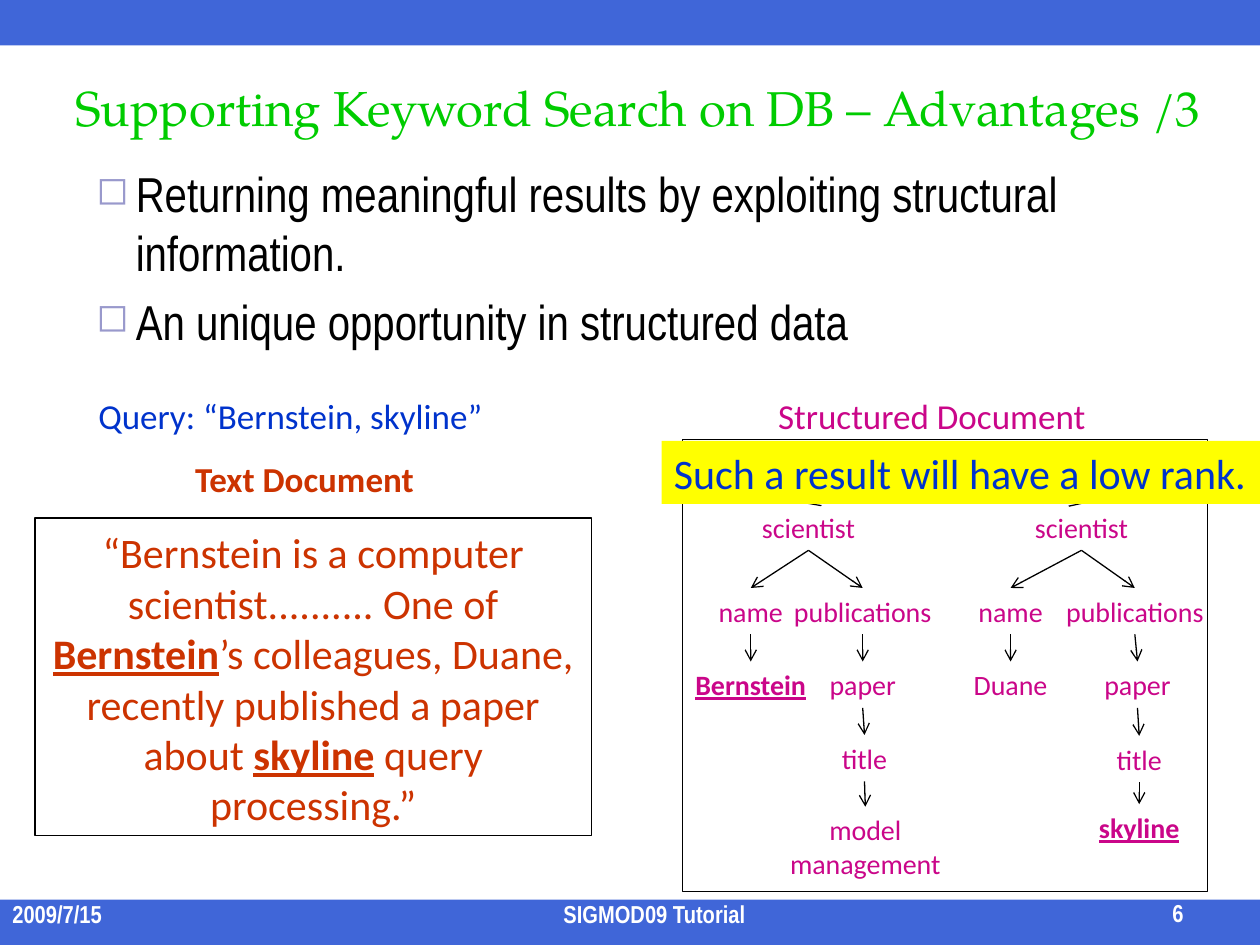
import pptx
import pptx.util
import pptx.dml.color
import pptx.enum.shapes
import pptx.enum.text
import pptx.oxml.ns
import lxml.etree

Pt = pptx.util.Pt
ALIGN = pptx.enum.text.PP_ALIGN
ANCHOR = pptx.enum.text.MSO_ANCHOR
RECTANGLE = pptx.enum.shapes.MSO_SHAPE.RECTANGLE
STRAIGHT = pptx.enum.shapes.MSO_CONNECTOR.STRAIGHT
qn = pptx.oxml.ns.qn
color = pptx.dml.color.RGBColor.from_string

BLUE, RUST, MAGENTA, WHITE, BLACK = "0033CC", "CC3300", "CA0689", "FFFFFF", "000000"

presentation = pptx.Presentation()
presentation.slide_width, presentation.slide_height = Pt(720), Pt(540)
slide = presentation.slides.add_slide(presentation.slide_layouts[6])


def add_rectangle(left, top, width, height, fill=None, line=None):
    shape = slide.shapes.add_shape(RECTANGLE, Pt(left), Pt(top), Pt(width), Pt(height))
    shape.shadow.inherit = False
    if fill:
        shape.fill.solid()
        shape.fill.fore_color.rgb = color(fill)
    else:
        shape.fill.background()
    if line:
        shape.line.color.rgb = color(line)
        shape.line.width = Pt(0.75)
    else:
        shape.line.fill.background()
    return shape


def add_text(left, top, width, height, text, size, ink, font="Calibri", bold=False,
             underline=False, align=ALIGN.CENTER, anchor=ANCHOR.TOP):
    box = slide.shapes.add_textbox(Pt(left), Pt(top), Pt(width), Pt(height))
    frame = box.text_frame
    frame.word_wrap = True
    frame.vertical_anchor = anchor
    frame.text = text
    for paragraph in frame.paragraphs:
        paragraph.alignment = align
        paragraph.font.size = Pt(size)
        paragraph.font.name = font
        for run in paragraph.runs:
            run.font.size = Pt(size)
            run.font.name = font
            run.font.color.rgb = color(ink)
            run.font.bold = bold
            run.font.underline = underline
    return box


for top in (514, 0):
    band = add_rectangle(0, top, 720, 26, BLUE)
    fill_color = band.fill._xPr.find(qn("a:solidFill"))[0]
    lxml.etree.SubElement(fill_color, qn("a:alpha"), val="75000")

body = add_text(
    12, 90, 660, 350,
    "Returning meaningful results by exploiting structural information.\n"
    "An unique opportunity in structured data",
    28, BLACK, "Arial Narrow", align=ALIGN.LEFT)
for paragraph in body.text_frame.paragraphs:
    paragraph.space_before = Pt(5.6)
    properties = paragraph._p.get_or_add_pPr()
    properties.set("marL", str(Pt(58.5)))
    properties.set("indent", str(Pt(-22.5)))
    bullet_color = lxml.etree.SubElement(properties, qn("a:buClr"))
    lxml.etree.SubElement(bullet_color, qn("a:srgbClr"), val="9999CC")
    lxml.etree.SubElement(properties, qn("a:buSzPct"), val="80000")
    lxml.etree.SubElement(properties, qn("a:buChar"), char="◻")
    for tag in ("a:buClr", "a:buSzPct", "a:buChar"):
        properties.append(properties.find(qn(tag)))
    defaults = properties.find(qn("a:defRPr"))
    if defaults is not None:
        properties.append(defaults)

for left, top, width, text, align in (
    (0, 517, 150, "2009/7/15", ALIGN.LEFT),
    (167, 517, 414, "SIGMOD09 Tutorial", ALIGN.CENTER),
    (592.5, 516, 91, "6", ALIGN.RIGHT),
):
    add_text(left, top, width, 17.3, text, 14, WHITE, "Arial Narrow",
             bold=True, align=align, anchor=ANCHOR.BOTTOM)

add_text(36, 18, 684, 86.4, "Supporting Keyword Search on DB – Advantages /3",
         28, "00CC00", "TeX Gyre Pagella", align=ALIGN.LEFT, anchor=ANCHOR.MIDDLE)

for left, top, width, text, ink, bold in (
    (34, 222, 264, "Query: “Bernstein, skyline”", BLUE, False),
    (42, 258, 264, "Text Document", RUST, True),
    (433.5, 222, 198, "Structured Document", MAGENTA, False),
):
    add_text(left, top, width, 31.5, text, 20, ink, bold=bold)

add_rectangle(20, 296, 318, 181.5, line=BLACK)
quote = add_text(20, 297.5, 318, 181.5, "", 24, RUST)
quote_paragraph = quote.text_frame.paragraphs[0]
for text, keyword in (
    ("“Bernstein is a computer scientist.......... One of ", False),
    ("Bernstein", True),
    ("’s colleagues, Duane, recently published a paper about ", False),
    ("skyline", True),
    (" query processing.”", False),
):
    run = quote_paragraph.add_run()
    run.text = text
    run.font.size = Pt(24)
    run.font.name = "Calibri"
    run.font.color.rgb = color(RUST)
    run.font.bold = run.font.underline = keyword

add_rectangle(390, 251, 300, 258.5, line=BLACK)

node_height = 26.5
root = (534, 264)
trees = (
    (("scientist", 462, 288, None), ("name", 429, 336, 0), ("publications", 493, 336, 0),
     ("Bernstein", 429, 378, 1), ("paper", 493, 378, 2), ("title", 494, 420, 4),
     ("model management", 494.5, 461, 5)),
    (("scientist", 618, 288, None), ("name", 577.5, 336, 0), ("publications", 648.5, 336, 0),
     ("Duane", 577.5, 378, 1), ("paper", 650, 378, 2), ("title", 651, 420.5, 4),
     ("skyline", 651, 459.5, 5)),
)
for tree in trees:
    for text, center, top, parent in tree:
        keyword = text in ("Bernstein", "skyline")
        add_text(center - 54, top, 108, node_height, text, 16, MAGENTA,
                 bold=keyword, underline=keyword)
        start = root if parent is None else (tree[parent][1], tree[parent][2] + node_height)
        arrow = slide.shapes.add_connector(
            STRAIGHT, Pt(start[0]), Pt(start[1]), Pt(center), Pt(top))
        arrow.line.color.rgb = color(BLACK)
        arrow.line.width = Pt(0.75)
        lxml.etree.SubElement(arrow.line._get_or_add_ln(), qn("a:tailEnd"), type="arrow")
        lxml.etree.SubElement(arrow._element.spPr, qn("a:effectLst"))

add_rectangle(378, 252, 342, 36, "FFFF00")
add_text(378, 252, 342, 36, "Such a result will have a low rank.", 24, BLUE, align=ALIGN.LEFT)

presentation.save("out.pptx")
